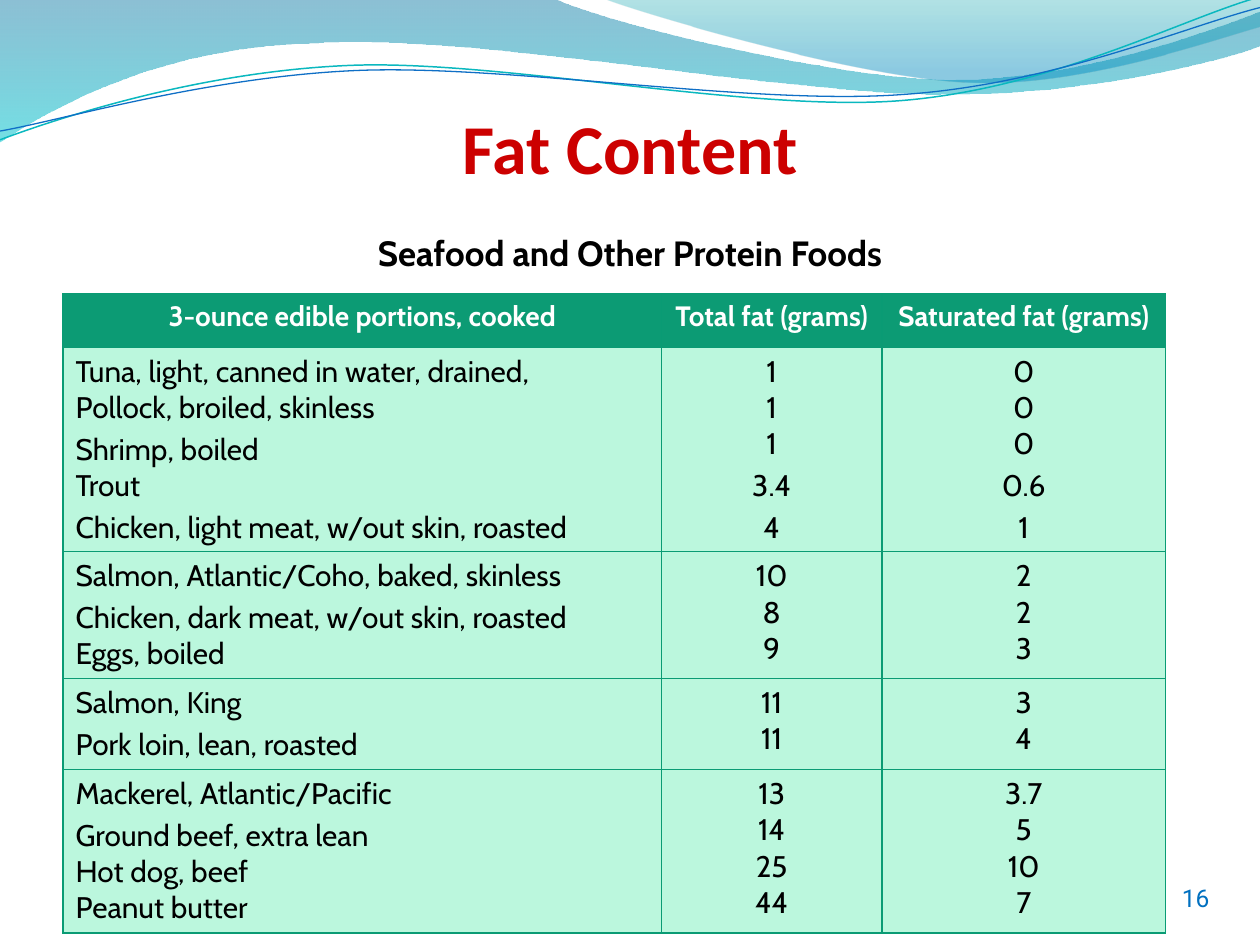
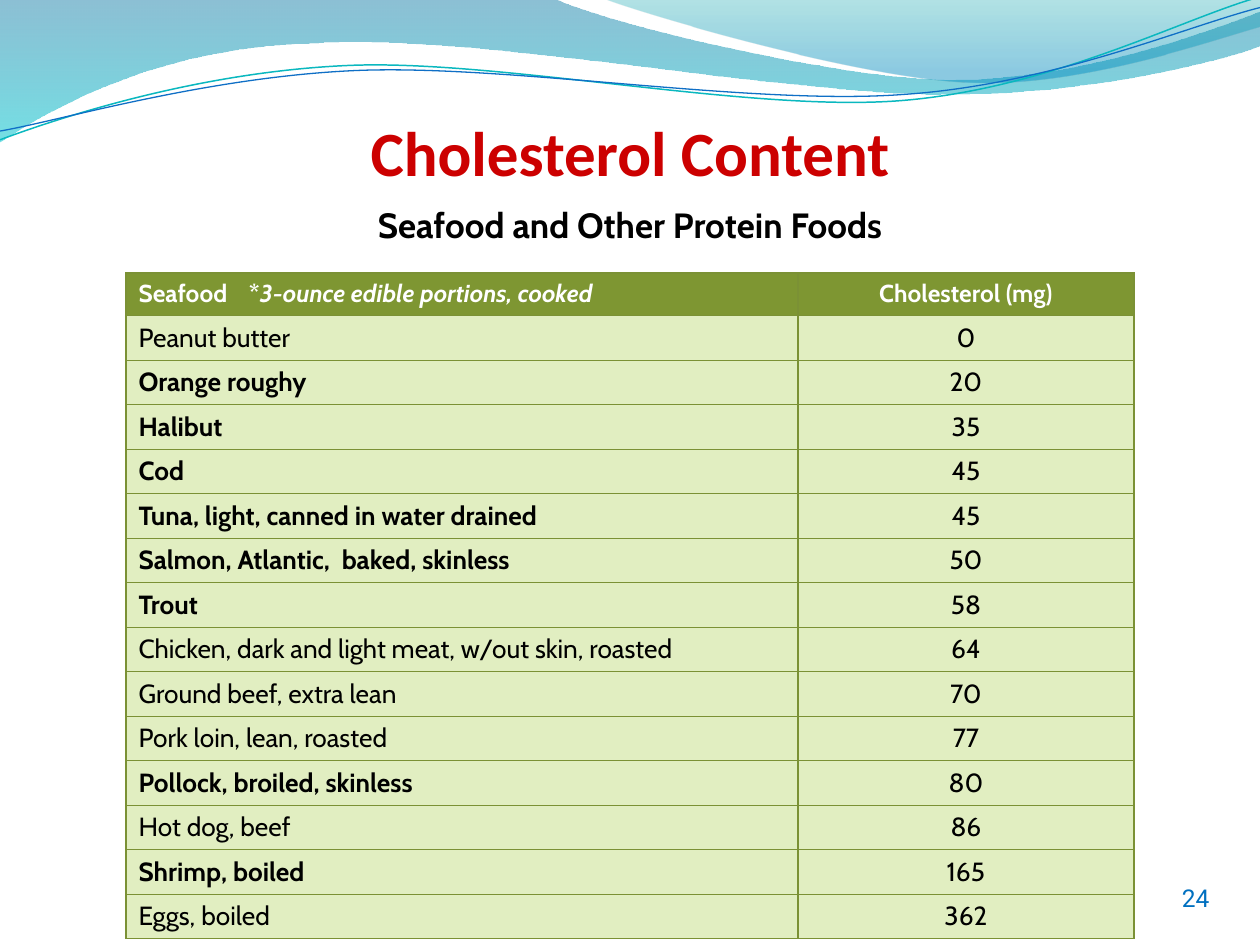
"""Build two slides comparing the fat and cholesterol content of protein foods."""
from math import cos, radians, sin

from lxml import etree
from pptx import Presentation
from pptx.dml.color import RGBColor
from pptx.enum.text import MSO_ANCHOR, PP_ALIGN
from pptx.oxml.ns import qn
from pptx.util import Pt

LEFT, CENTER = PP_ALIGN.LEFT, PP_ALIGN.CENTER
TOP, MIDDLE, BOTTOM = MSO_ANCHOR.TOP, MSO_ANCHOR.MIDDLE, MSO_ANCHOR.BOTTOM
BLANK_LAYOUT = 6
LINE_TILT = -2.7
HEADING_FONT, BODY_FONT, NUMBER_FONT = "Calibri", "Cabin", "Roboto"
SUBTITLE = "Seafood and Other Protein Foods"

COLORS = {
    "title": "CC0000",
    "text": "000000",
    "header_text": "FFFFFF",
    "page_number": "0070C0",
    "fat_header": "0C9B74",
    "fat_body": "BBF7DD",
    "fat_border": "0A9B74",
    "cholesterol_header": "7E9632",
    "cholesterol_body": "E1EEC1",
    "cholesterol_border": "7B9135",
    "wave_top": "0074A1",
    "wave_bottom": "00C6CF",
    "crest_top": "00A1A9",
    "crest_bottom": "008BBF",
    "teal_line": "0AB8BF",
    "blue_line": "0F6FC6",
}

WAVE_FRAME = (-0.7, -0.7, 721.4, 82.1)
WAVE = [(0, 0), (316.8, -0.7),
        (342.7, 12.2, 478.1, 45.4, 545.8, 45.4),
        (614.2, 45.4, 689.8, 18.7, 720, 6.5), (720.7, 25.9),
        (707.8, 31.7, 626.4, 54.7, 537.1, 54),
        (447.8, 54, 275, 20.2, 185, 24.5),
        (92.9, 25.9, 33.1, 59.8, -0.7, 81.4), (0, 0)]
CREST_FRAME = (344.9, -0.7, 375.1, 50.4)
CREST = [(344.9, -0.7),
         (366.5, 7.9, 491, 44.6, 553.7, 46.8),
         (616.3, 49.7, 691.9, 23, 720, 15.1), (720, 0), (344.9, -0.7)]
TEAL_FRAME = (-1.4, 15.8, 721.4, 51.1)
TEAL_LINE = [(0, 79.9),
             (34.6, 67, 113.8, 41, 199.4, 37.4),
             (284.4, 33.8, 427, 64.1, 513.4, 57.6),
             (599.8, 51.1, 675.4, 10.8, 718.6, -1.4)]
BLUE_FRAME = (-1.4, 21.6, 722.2, 41.8)
BLUE_LINE = [(0, 74.9),
             (33.8, 69.1, 118.1, 43.9, 203.8, 40.3),
             (290.2, 36.7, 429.8, 60.5, 516.2, 54),
             (601.9, 48.2, 677.5, 15.1, 720, 4.3)]

FAT_HEADER = ["3-ounce edible portions, cooked", "Total fat (grams)", "Saturated fat (grams)"]
FAT_ROWS = [
    (["Tuna, light, canned in water, drained,\nPollock, broiled, skinless",
      "Shrimp, boiled\nTrout", "Chicken, light meat, w/out skin, roasted"],
     ["1\n1\n1", "3.4", "4"], ["0\n0\n0", "0.6", "1"]),
    (["Salmon, Atlantic/Coho, baked, skinless",
      "Chicken, dark meat, w/out skin, roasted\nEggs, boiled"],
     ["10\n8\n9"], ["2\n2\n3"]),
    (["Salmon, King", "Pork loin, lean, roasted"], ["11\n11"], ["3\n4"]),
    (["Mackerel, Atlantic/Pacific", "Ground beef, extra lean\nHot dog, beef\nPeanut butter"],
     ["13\n14\n25\n44"], ["3.7\n5\n10\n7"]),
]
CHOLESTEROL_ROWS = [
    ("Peanut butter", 0),
    ("Orange roughy", 20),
    ("Halibut", 35),
    ("Cod", 45),
    ("Tuna, light, canned in water drained", 45),
    ("Salmon, Atlantic,  baked, skinless", 50),
    ("Trout", 58),
    ("Chicken, dark and light meat, w/out skin, roasted", 64),
    ("Ground beef, extra lean", 70),
    ("Pork loin, lean, roasted", 77),
    ("Pollock, broiled, skinless", 80),
    ("Hot dog, beef", 86),
    ("Shrimp, boiled", 165),
    ("Eggs, boiled", 362),
]
SEAFOOD = ("Orange roughy", "Halibut", "Cod", "Tuna", "Salmon", "Trout", "Pollock", "Shrimp")


def color(name):
    """Return the named colour."""
    return RGBColor.from_string(COLORS[name])


def style_paragraph(para, font_name, size, color_name, bold=False, align=CENTER):
    """Set the alignment and font of a paragraph."""
    para.alignment = align
    para.font.name = font_name
    para.font.size = Pt(size)
    para.font.bold = bold
    para.font.color.rgb = color(color_name)


def to_frame(x, y, frame, tilt):
    """Convert a page point to a point inside a frame tilted about its centre."""
    left, top, width, height = frame
    across, down = x - left - width / 2, y - top - height / 2
    angle = radians(-tilt)
    return (Pt(across * cos(angle) - down * sin(angle) + width / 2),
            Pt(across * sin(angle) + down * cos(angle) + height / 2))


def add_outline(page, frame, outline, tilt=0):
    """Draw corners and Bezier segments as a freeform without shadow."""
    left, top, width, height = map(Pt, frame)
    builder = page.shapes.build_freeform(left, top)
    builder.add_line_segments([(left + width, top + height)], close=False)
    shape = builder.convert_to_shape()
    shape.rotation = tilt
    shape.shadow.inherit = False
    geometry = next(shape.element.spPr.iter(qn("a:path")))
    for node in list(geometry):
        geometry.remove(node)
    for index, segment in enumerate(outline):
        kind = "a:moveTo" if index == 0 else "a:lnTo" if len(segment) == 2 else "a:cubicBezTo"
        node = etree.SubElement(geometry, qn(kind))
        for x, y in zip(segment[::2], segment[1::2]):
            across, down = to_frame(x, y, frame, tilt)
            etree.SubElement(node, qn("a:pt"), x=str(across), y=str(down))
    if outline[0] == outline[-1]:
        etree.SubElement(geometry, qn("a:close"))
    return shape


def add_gradient_band(page, frame, outline, stops):
    """Draw a closed band with a translucent gradient running downwards."""
    band = add_outline(page, frame, outline)
    band.line.fill.background()
    band.fill.gradient()
    band.fill.gradient_angle = 270
    for stop, (position, color_name, _) in zip(band.fill.gradient_stops, stops):
        stop.position = position
        stop.color.rgb = color(color_name)
    for value, (_, _, opacity) in zip(band.element.spPr.iter(qn("a:srgbClr")), stops):
        etree.SubElement(value, qn("a:alpha"), val=str(opacity * 1000))


def add_wave_line(page, frame, outline, color_name, width):
    """Draw an open, slightly tilted curve."""
    curve = add_outline(page, frame, outline, LINE_TILT)
    curve.fill.background()
    curve.line.color.rgb = color(color_name)
    curve.line.width = Pt(width)


def add_text(page, frame, text, font_name, size, color_name, bold=False,
             anchor=TOP, margins=(7.2, 3.6, 7.2, 3.6)):
    """Add a centred single-paragraph text box."""
    box = page.shapes.add_textbox(*map(Pt, frame))
    body = box.text_frame
    body.word_wrap = True
    body.vertical_anchor = anchor
    body.margin_left, body.margin_top, body.margin_right, body.margin_bottom = map(Pt, margins)
    para = body.paragraphs[0]
    para.text = text
    style_paragraph(para, font_name, size, color_name, bold)


def add_page(deck, title, title_size, subtitle_top, number):
    """Add a page with waves, title, subtitle and page number."""
    page = deck.slides.add_slide(deck.slide_layouts[BLANK_LAYOUT])
    add_gradient_band(page, WAVE_FRAME, WAVE, [(0, "wave_top", 45), (1, "wave_bottom", 55)])
    add_gradient_band(page, CREST_FRAME, CREST,
                      [(0, "crest_top", 30), (0.8, "crest_bottom", 45)])
    add_wave_line(page, TEAL_FRAME, TEAL_LINE, "teal_line", 0.85)
    add_wave_line(page, BLUE_FRAME, BLUE_LINE, "blue_line", 0.75)
    add_text(page, (0, 0, 720, 108), title, HEADING_FONT, title_size, "title", True,
             BOTTOM, (0, 3.6, 0, 0))
    add_text(page, (6, subtitle_top, 708, 31.5), SUBTITLE, BODY_FONT, 20, "text", True)
    add_text(page, (648, 486, 70.5, 54), str(number), NUMBER_FONT, 14, "page_number",
             anchor=MIDDLE)
    return page


def add_grid(page, left, top, widths, heights, theme):
    """Add a table with themed borders and fills."""
    grid = page.shapes.add_table(len(heights), len(widths), Pt(left), Pt(top),
                                 Pt(sum(widths)), Pt(sum(heights))).table
    grid.horz_banding = False
    for column, width in zip(grid.columns, widths):
        column.width = Pt(width)
    for index, (row, height) in enumerate(zip(grid.rows, heights)):
        row.height = Pt(height)
        for cell in row.cells:
            properties = cell._tc.get_or_add_tcPr()
            for side in ("a:lnL", "a:lnR", "a:lnT", "a:lnB"):
                border = etree.SubElement(properties, qn(side), w=str(Pt(0.75)))
                fill = etree.SubElement(border, qn("a:solidFill"))
                etree.SubElement(fill, qn("a:srgbClr"), val=COLORS[theme + "_border"])
            cell.fill.solid()
            cell.fill.fore_color.rgb = color(theme + ("_body" if index else "_header"))
    return grid


def fill_cell(cell, paragraphs, size, color_name="text", bold=False, align=CENTER, gap=0):
    """Write paragraphs into a table cell."""
    body = cell.text_frame
    for index, text in enumerate(paragraphs):
        para = body.add_paragraph() if index else body.paragraphs[0]
        para.text = text
        para.space_before = Pt(gap)
        style_paragraph(para, BODY_FONT, size, color_name, bold, align)


def add_fat_table(page):
    """Add the table of total and saturated fat."""
    grid = add_grid(page, 36, 167.8, (342, 126, 162), (30.6, 117, 72.4, 52, 93.4), "fat")
    for column, label in enumerate(FAT_HEADER):
        fill_cell(grid.cell(0, column), [label], 16, "header_text", True, gap=3.2)
    for row, cells in enumerate(FAT_ROWS, 1):
        for column, paragraphs in enumerate(cells):
            fill_cell(grid.cell(row, column), paragraphs, 17,
                      align=CENTER if column else LEFT, gap=3)


def add_cholesterol_table(page):
    """Add the table of cholesterol per food, with seafood in bold."""
    heights = [24.4] + [25.45] * len(CHOLESTEROL_ROWS)
    grid = add_grid(page, 72, 156, (384, 192), heights, "cholesterol")
    fill_cell(grid.cell(0, 0), ["Seafood\t*"], 14, "header_text", True, LEFT)
    para = grid.cell(0, 0).text_frame.paragraphs[0]
    span = para.add_run()
    span.text = "3-ounce edible portions, cooked"
    span.font.italic = True
    tabs = etree.Element(qn("a:tabLst"))
    etree.SubElement(tabs, qn("a:tab"), pos=str(Pt(63)), algn="l")
    para._p.pPr.find(qn("a:defRPr")).addprevious(tabs)
    fill_cell(grid.cell(0, 1), ["Cholesterol (mg)"], 14, "header_text", True)
    for row, (food, amount) in enumerate(CHOLESTEROL_ROWS, 1):
        fill_cell(grid.cell(row, 0), [food], 15, bold=food.startswith(SEAFOOD), align=LEFT)
        fill_cell(grid.cell(row, 1), [str(amount)], 15)


def main():
    """Build and save the deck."""
    deck = Presentation()
    deck.slide_width, deck.slide_height = Pt(720), Pt(540)
    add_fat_table(add_page(deck, "Fat Content", 40, 129, 16))
    add_cholesterol_table(add_page(deck, "Cholesterol Content", 36, 113, 24))
    deck.save("out.pptx")


if __name__ == "__main__":
    main()
